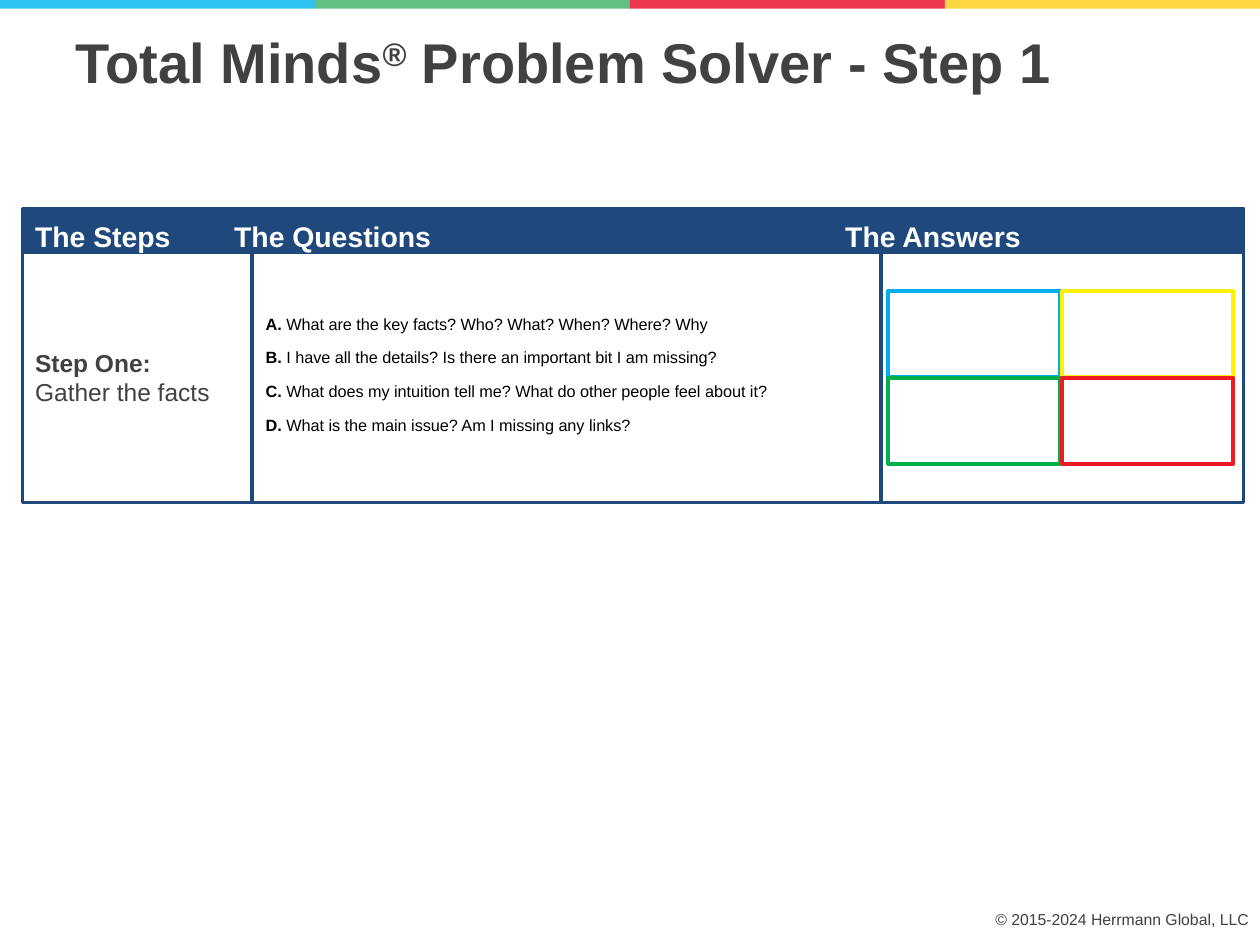
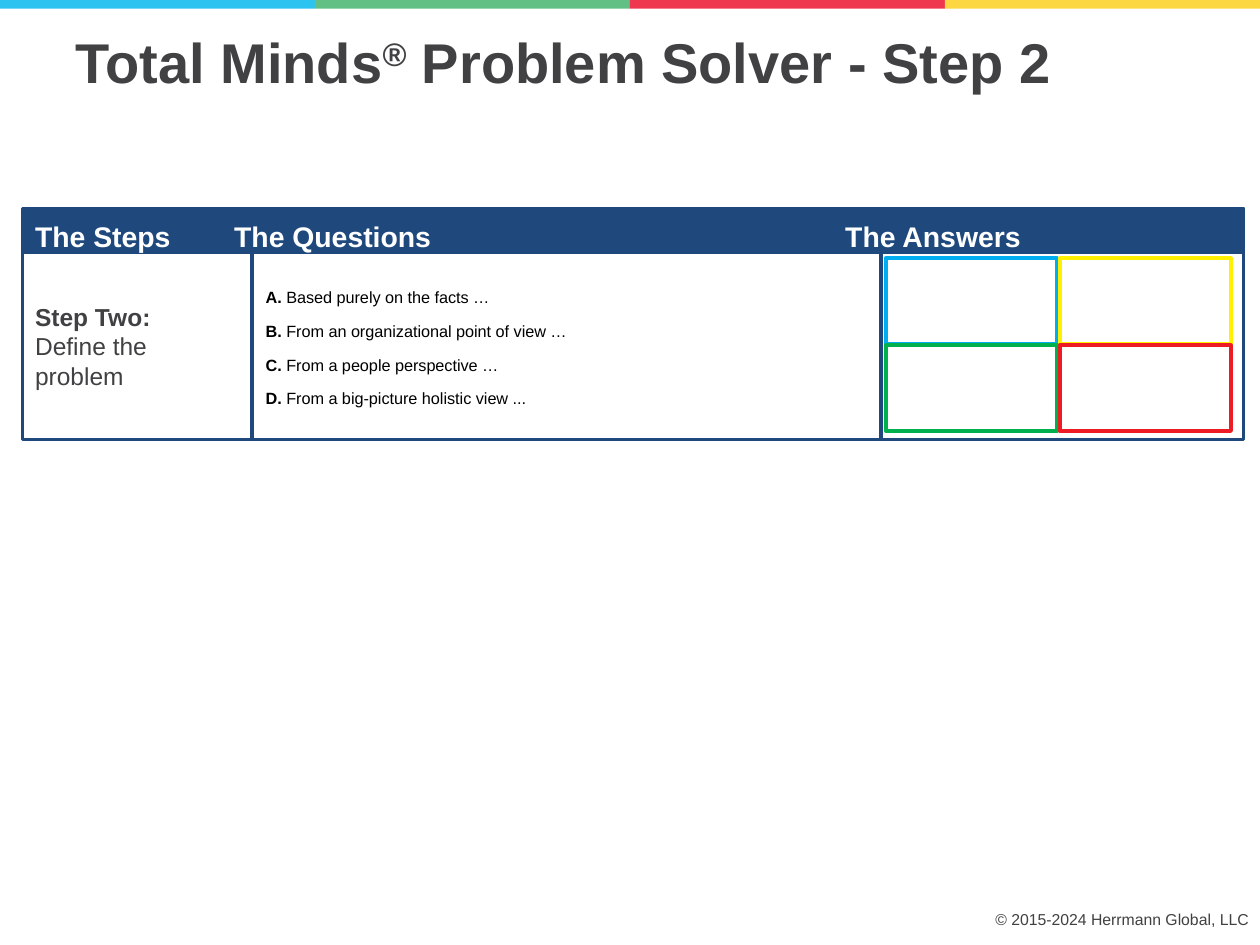
"""Build the two problem solver step slides."""
from lxml.etree import SubElement
from pptx import Presentation
from pptx.dml.color import RGBColor
from pptx.enum.shapes import MSO_SHAPE as Shape
from pptx.enum.text import MSO_ANCHOR as Anchor, PP_ALIGN as Align
from pptx.oxml.ns import qn
from pptx.util import Inches, Pt

WIDE, HIGH = 10, 7.5
NAVY, GREY, WHITE, BLACK = "1F497D", "414042", "FFFFFF", "000000"
BANDS = ["2CC3F0", "63C084", "EF374F", "FDD742"]
QUADS = ["00ADEE", "FFF100", "00B04C", "ED1C24"]
HEADS = "The Steps\tThe Questions\tThe Answers"
STOPS = [1.58, 6.43]
FOOT = "© 2015-2024 Herrmann Global, LLC"
LEFT, TOP, HEAD = 0.18, 1.66, 0.34
COLS = [1.82, 4.99, 2.88]
STEPS = [
    dict(num=1, step="Step One:", task="Gather the facts", deep=2.33,
         mid=3.0, quad=(7.05, 2.31), asks=[
             "What are the key facts? Who? What? When? Where? Why",
             "I have all the details? Is there an important bit I am missing?",
             "What does my intuition tell me? What do other people feel about it?",
             "What is the main issue? Am I missing any links?"]),
    dict(num=2, step="Step Two:", task="Define the problem", deep=1.83,
         mid=2.79, quad=(7.03, 2.05), asks=[
             "Based purely on the facts …",
             "From an organizational point of view …",
             "From a people perspective …",
             "From a big-picture holistic view ..."]),
]


def paint(part, color):
    if hasattr(part, "solid"):
        part.solid()
        part = part.fore_color
    else:
        part = part.color
    part.rgb = RGBColor.from_string(color)


def rect(slide, x, y, w, h, fill=None, line=None, thick=2):
    box = slide.shapes.add_shape(Shape.RECTANGLE, *map(Inches, (x, y, w, h)))
    box.shadow.inherit = False
    if fill:
        paint(box.fill, fill)
    else:
        box.fill.background()
    if line:
        paint(box.line, line)
        box.line.width = Pt(thick)
    else:
        box.line.fill.background()


def text(slide, x, y, w, h, paras, size=14, color=GREY, align=Align.LEFT,
         anchor=Anchor.TOP, pad=(0.1, 0.05), stops=()):
    frame = slide.shapes.add_textbox(*map(Inches, (x, y, w, h))).text_frame
    frame.word_wrap, frame.vertical_anchor = True, anchor
    frame.margin_left = frame.margin_right = Inches(pad[0])
    frame.margin_top = frame.margin_bottom = Inches(pad[1])
    for i, runs in enumerate(paras):
        para = frame.add_paragraph() if i else frame.paragraphs[0]
        para.alignment = align
        if stops:
            tabs = SubElement(para._p.get_or_add_pPr(), qn("a:tabLst"))
            for stop in stops:
                SubElement(tabs, qn("a:tab"), pos=str(Inches(stop)), algn="l")
        for words, bold, lift in runs:
            run = para.add_run()
            run.text = words
            run.font.name, run.font.size, run.font.bold = "Arial", Pt(size), bold
            paint(run.font, color)
            if lift:
                run._r.get_or_add_rPr().set("baseline", "30000")


def frame(slide, num):
    part = WIDE / len(BANDS)
    for i, color in enumerate(BANDS):
        rect(slide, i * part, 0, part, 0.07, color)
    text(slide, 7.61, 7.18, 2.39, 0.24, [[(FOOT, False, False)]], size=9,
         align=Align.RIGHT, pad=(0.09, 0.04))
    text(slide, 0.5, 0.17, 9, 0.93, [[
        ("Total Minds", True, False), ("®", True, True),
        (f" Problem Solver - Step {num}", True, False)]], size=32)


def grid(slide, deep):
    x = LEFT
    for wide in COLS:
        rect(slide, x, TOP, wide, deep, WHITE, NAVY)
        x += wide
    rect(slide, LEFT, TOP, sum(COLS), HEAD, NAVY, NAVY)
    text(slide, LEFT, 1.64, 9.49, 0.57, [[(HEADS, True, True)]], size=28,
         color=WHITE, stops=STOPS)


def build(slide, num, step, task, deep, mid, quad, asks):
    frame(slide, num)
    grid(slide, deep)
    text(slide, LEFT, TOP + HEAD, 1.79, deep - HEAD,
         [[(step, True, False)], [(task, False, False)]], anchor=Anchor.MIDDLE)
    lines = [[(f"{key}. ", True, True), (ask, False, True)]
             for key, ask in zip("ABCD", asks)]
    text(slide, LEFT + COLS[0] + 0.01, mid - 0.59, COLS[1], 1.18, lines,
         size=16, color=BLACK, anchor=Anchor.MIDDLE)
    for i, color in enumerate(QUADS):
        row, col = divmod(i, 2)
        rect(slide, quad[0] + col * 1.38, quad[1] + row * 0.69, 1.36, 0.68,
             WHITE, color, 2.25)


def main():
    deck = Presentation()
    deck.slide_width, deck.slide_height = Inches(WIDE), Inches(HIGH)
    for step in STEPS:
        build(deck.slides.add_slide(deck.slide_layouts[6]), **step)
    deck.save("out.pptx")


if __name__ == "__main__":
    main()
